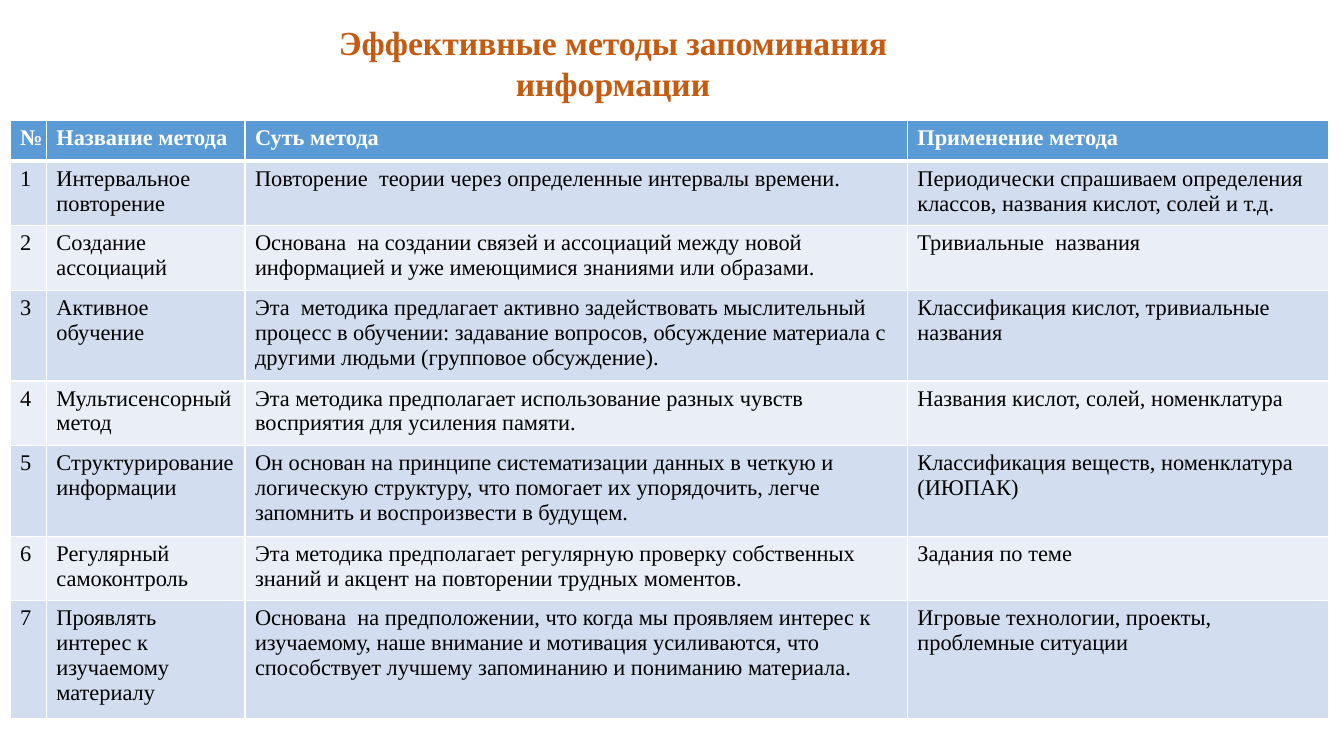
from lxml.etree import SubElement
from pptx import Presentation
from pptx.dml.color import RGBColor
from pptx.enum.text import MSO_AUTO_SIZE, PP_ALIGN
from pptx.oxml.ns import qn
from pptx.util import Inches, Pt

FONT = "Times New Roman"
ORANGE = RGBColor(0xC5, 0x5A, 0x11)
BLUE = RGBColor(0x5B, 0x9B, 0xD5)
BAND_DARK = RGBColor(0xD2, 0xDE, 0xEF)
BAND_LIGHT = RGBColor(0xEA, 0xEF, 0xF7)
WHITE = RGBColor(0xFF, 0xFF, 0xFF)
BLACK = RGBColor(0, 0, 0)

TITLE = "Эффективные методы запоминания информации"
HEADER = ("№", "Название метода", "Суть метода", "Применение метода")
METHODS = [
    ("Интервальное повторение",
     "Повторение  теории через определенные интервалы времени.",
     "Периодически спрашиваем определения классов, названия кислот, солей и т.д."),
    ("Создание ассоциаций",
     "Основана  на создании связей и ассоциаций между новой информацией "
     "и уже имеющимися знаниями или образами.",
     "Тривиальные  названия"),
    ("Активное обучение",
     "Эта  методика предлагает активно задействовать мыслительный процесс в обучении: "
     "задавание вопросов, обсуждение материала с другими людьми (групповое обсуждение).",
     "Классификация кислот, тривиальные названия"),
    ("Мультисенсорный метод",
     "Эта методика предполагает использование разных чувств восприятия "
     "для усиления памяти.",
     "Названия кислот, солей, номенклатура"),
    ("Структурирование информации",
     "Он основан на принципе систематизации данных в четкую и логическую структуру, "
     "что помогает их упорядочить, легче запомнить и воспроизвести в будущем.",
     "Классификация веществ, номенклатура (ИЮПАК)"),
    ("Регулярный самоконтроль",
     "Эта методика предполагает регулярную проверку собственных знаний "
     "и акцент на повторении трудных моментов.",
     "Задания по теме"),
    ("Проявлять интерес к изучаемому материалу",
     "Основана  на предположении, что когда мы проявляем интерес к изучаемому, "
     "наше внимание и мотивация усиливаются, что способствует лучшему запоминанию "
     "и пониманию материала.",
     "Игровые технологии, проекты, проблемные ситуации"),
]
COL_WIDTHS = (0.36, 1.97, 6.57, 4.18)
ROW_HEIGHTS = (0.41, 0.64, 0.64, 0.9, 0.64, 0.9, 0.64, 1.14)


def add_run(p, text, size, color, bold):
    """Add one formatted run to a paragraph."""
    r = p.add_run()
    r.text = text
    r.font.name = FONT
    r.font.size = Pt(size)
    r.font.bold = bold
    r.font.color.rgb = color


def set_borders(cell, bottom):
    """Draw white borders round a cell, with the given bottom width in points."""
    tc_pr = cell._tc.get_or_add_tcPr()
    for side, width in (("L", 1), ("R", 1), ("T", 1), ("B", bottom)):
        ln = SubElement(tc_pr, qn(f"a:ln{side}"), w=str(Pt(width)))
        fill = SubElement(ln, qn("a:solidFill"))
        SubElement(fill, qn("a:srgbClr"), val=str(WHITE))


def add_title(slide, left, top, width, height):
    """Place the centred slide title in the given box."""
    tf = slide.shapes.add_textbox(left, top, width, height).text_frame
    tf.word_wrap = True
    tf.auto_size = MSO_AUTO_SIZE.SHAPE_TO_FIT_TEXT
    p = tf.paragraphs[0]
    p.alignment = PP_ALIGN.CENTER
    add_run(p, TITLE, 24, ORANGE, True)


def add_methods_table(slide, left, top, width, height):
    """Place the banded table of methods in the given box."""
    rows = [HEADER] + [(str(n), *method) for n, method in enumerate(METHODS, 1)]
    table = slide.shapes.add_table(len(rows), len(HEADER), left, top, width, height).table
    for column, inches in zip(table.columns, COL_WIDTHS):
        column.width = Inches(inches)
    for row, inches in zip(table.rows, ROW_HEIGHTS):
        row.height = Inches(inches)
    for i, texts in enumerate(rows):
        is_header = i == 0
        band = BLUE if is_header else BAND_DARK if i % 2 else BAND_LIGHT
        for j, text in enumerate(texts):
            cell = table.cell(i, j)
            set_borders(cell, 3 if is_header else 1)
            cell.fill.solid()
            cell.fill.fore_color.rgb = band
            add_run(cell.text_frame.paragraphs[0], text, 16,
                    WHITE if is_header else BLACK, is_header)


def main():
    """Build the slide and save it."""
    prs = Presentation()
    prs.slide_width, prs.slide_height = Inches(13.33), Inches(7.5)
    slide = prs.slides.add_slide(prs.slide_layouts[6])
    add_title(slide, Inches(2.67), Inches(0.17), Inches(6.82), Inches(0.91))
    add_methods_table(slide, Inches(0.1), Inches(1.19), Inches(13.08), Inches(5.91))
    prs.save("out.pptx")


if __name__ == "__main__":
    main()
